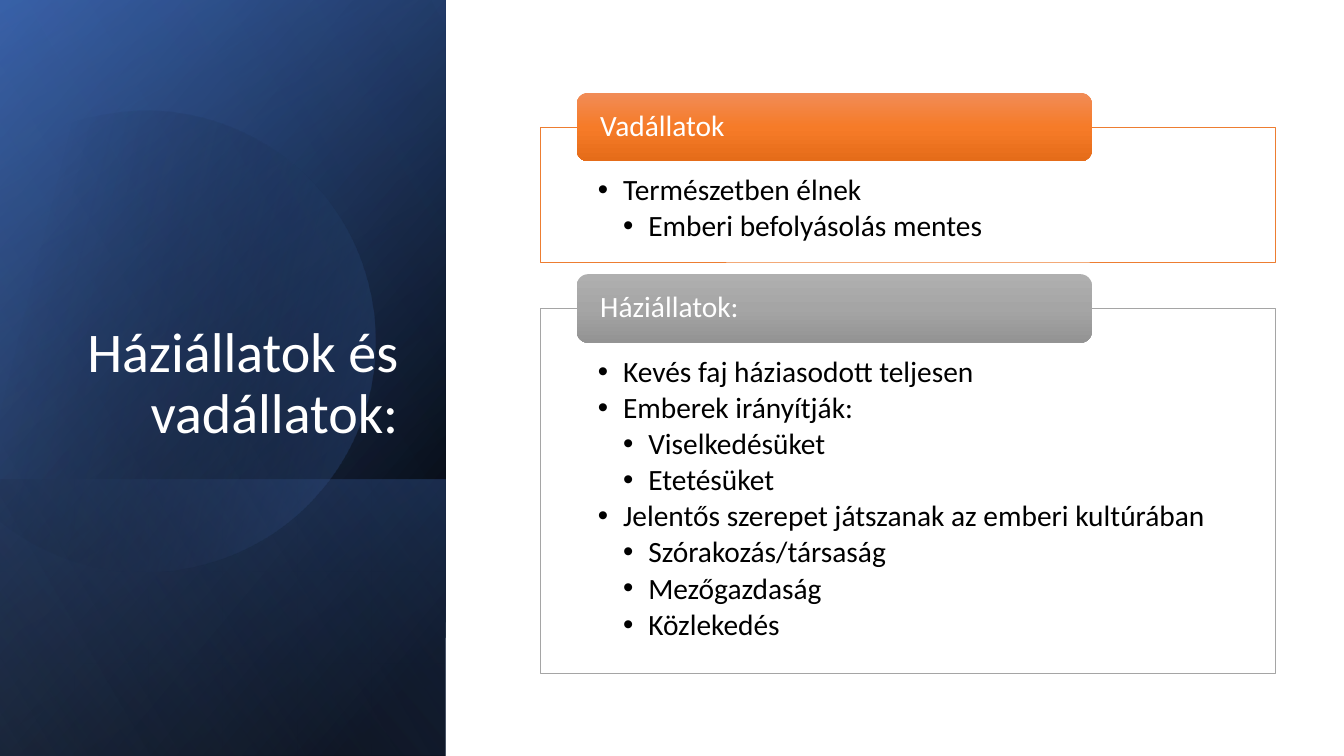
import math
from lxml import etree
from pptx import Presentation
from pptx import util as u
from pptx.dml.color import RGBColor
from pptx.enum import shapes, text
from pptx.oxml.ns import qn

DISC_START = (1.49, 1.1)
DISC_SEGMENTS = [
    [(2.46, 1.12), (3.35, 1.77), (3.63, 2.75)],
    [(3.98, 3.97), (3.28, 5.23), (2.07, 5.58)],
    [(1.31, 5.8), (0.53, 5.61), (-0.03, 5.14)],
    [(-0.15, 5.03)],
    [(-0.15, 1.75)],
    [(0, 1.61)],
    [(0.23, 1.42), (0.5, 1.28), (0.8, 1.19)],
    [(1.03, 1.13), (1.26, 1.1), (1.49, 1.1)],
]


def color(value):
    return RGBColor.from_string(value)


def write(tf, items, font="Calibri", size=21, fill="000000", align=text.PP_ALIGN.LEFT,
          anchor=text.MSO_ANCHOR.TOP, insets=(0.1, 0.05, 0.1, 0.05), after=0):
    tf.word_wrap = True
    tf.auto_size = text.MSO_AUTO_SIZE.NONE
    tf.vertical_anchor = anchor
    tf.margin_left, tf.margin_top, tf.margin_right, tf.margin_bottom = map(u.Inches, insets)
    for i, (level, words) in enumerate(items):
        p = tf.add_paragraph() if i else tf.paragraphs[0]
        p.alignment = align
        p.line_spacing = 0.9
        p.space_before = u.Pt(0)
        p.space_after = u.Pt(after)
        r = p.add_run()
        r.text = words
        r.font.name = font
        r.font.size = u.Pt(size)
        r.font.color.rgb = color(fill)
        if level:
            p.level = level
            pPr = p._p.get_or_add_pPr()
            pPr.set("marL", str(u.Inches(0.25 * level)))
            pPr.set("indent", str(u.Inches(-0.25)))
            bullet_font = etree.SubElement(pPr, qn("a:buFont"))
            bullet_font.set("typeface", "Arial")
            etree.SubElement(pPr, qn("a:buChar")).set("char", "•")


class Deck:
    font = "Calibri"
    white = "FFFFFF"
    panel_width = 4.42
    box_left, box_width = 5.36, 7.29
    header_left, header_width, header_height = 5.72, 5.11, 0.68

    def __init__(self, prs):
        self.s = prs.slides.add_slide(prs.slide_layouts[5])

    def shape(self, kind, left, top, width, height):
        sp = self.s.shapes.add_shape(kind, *map(u.Inches, (left, top, width, height)))
        sp.shadow.inherit = False
        sp.line.fill.background()
        return sp

    def gradient(self, sp, stops, angle):
        sp.fill.gradient()
        grad = sp.element.spPr.find(qn("a:gradFill"))
        stop_list = grad.find(qn("a:gsLst"))
        for old in list(stop_list):
            stop_list.remove(old)
        for position, value, alpha in stops:
            gs = etree.SubElement(stop_list, qn("a:gs"))
            gs.set("pos", str(position * 1000))
            rgb = etree.SubElement(gs, qn("a:srgbClr"))
            rgb.set("val", value)
            if alpha < 100:
                etree.SubElement(rgb, qn("a:alpha")).set("val", str(alpha * 1000))
        grad.find(qn("a:lin")).set("ang", str(angle * 60000))

    def panel(self, top, stops, angle):
        length, width = 7.5 - top, self.panel_width
        sp = self.shape(shapes.MSO_SHAPE.RECTANGLE, (width - length) / 2,
                        top + (length - width) / 2, length, width)
        sp.rotation = 90
        sp.element.spPr.find(qn("a:xfrm")).set("flipH", "1")
        self.gradient(sp, stops, angle)

    def cut_disc(self, left, top, width, height, rotation, stops, angle):
        cx, cy = left + width / 2, top + height / 2
        cos, sin = math.cos(math.radians(-rotation)), math.sin(math.radians(-rotation))

        def unturned(point):
            dx, dy = point[0] - cx, point[1] - cy
            return u.Inches(cx + dx * cos - dy * sin), u.Inches(cy + dx * sin + dy * cos)

        points = [unturned(q) for q in [DISC_START] + sum(DISC_SEGMENTS, [])]
        builder = self.s.shapes.build_freeform(*points[0])
        builder.add_line_segments(points[1:], close=True)
        sp = builder.convert_to_shape()
        shift_x, shift_y = sp.left - u.Inches(left), sp.top - u.Inches(top)
        sp.width, sp.height = u.Inches(width), u.Inches(height)
        sp.left, sp.top, sp.rotation = u.Inches(left), u.Inches(top), rotation

        outline = next(sp.element.iter(qn("a:path")))
        outline.set("w", str(sp.width))
        outline.set("h", str(sp.height))
        for pt in outline.iter(qn("a:pt")):
            pt.set("x", str(int(pt.get("x")) + shift_x))
            pt.set("y", str(int(pt.get("y")) + shift_y))
        lines = iter(outline.findall(qn("a:lnTo")))
        for segment in DISC_SEGMENTS:
            group = [next(lines) for _ in segment]
            if len(group) == 3:
                curve = etree.Element(qn("a:cubicBezTo"))
                group[0].addprevious(curve)
                for line in group:
                    curve.append(line[0])
                    outline.remove(line)

        sp.shadow.inherit = False
        sp.line.fill.background()
        self.gradient(sp, stops, angle)

    def title(self, words, left, top, width, height):
        sp = self.s.shapes.title
        sp.left, sp.top, sp.width, sp.height = map(u.Inches, (left, top, width, height))
        write(sp.text_frame, [(0, words)], font=self.font, size=40, fill=self.white,
              align=text.PP_ALIGN.RIGHT, anchor=text.MSO_ANCHOR.BOTTOM)
        self.s.shapes.element.append(sp.element)

    def section(self, header, top, height, tones, items):
        box = self.shape(shapes.MSO_SHAPE.RECTANGLE, self.box_left, top, self.box_width, height)
        box.fill.solid()
        box.fill.fore_color.rgb = color(self.white)
        box.line.color.rgb = color(tones["line"])
        box.line.width = u.Pt(0.5)
        write(box.text_frame, items, font=self.font, insets=(0.57, 0.48, 0.57, 0.16), after=3.15)
        tab = self.shape(shapes.MSO_SHAPE.ROUNDED_RECTANGLE, self.header_left,
                         top - self.header_height / 2, self.header_width, self.header_height)
        self.gradient(tab, [(i * 50, c, 100) for i, c in enumerate(tones["header"])], 90)
        write(tab.text_frame, [(0, header)], font=self.font, fill=self.white,
              anchor=text.MSO_ANCHOR.MIDDLE, insets=(0.2, 0, 0.2, 0))


def main():
    prs = Presentation()
    prs.slide_width, prs.slide_height = u.Inches(13.33), u.Inches(7.5)
    deck = Deck(prs)

    deck.panel(0, [(8, "000000", 100), (100, "2F5597", 100)], 50)
    deck.panel(0, [(0, "000000", 0), (99, "4472C4", 46)], 30)
    deck.panel(4.76, [(2, "4472C4", 29), (100, "000000", 30)], 130)
    deck.cut_disc(-0.55, 1.06, 4.27, 4.57, 343.9,
                  [(29, "000000", 0), (100, "4472C4", 43)], 30)
    deck.panel(0, [(0, "000000", 0), (99, "8FAADC", 11)], 120)
    deck.title("Háziállatok és vadállatok:", 0.64, 1.85, 3.41, 2.62)

    deck.section("Vadállatok", 1.26, 1.34,
                 {"line": "ED7D31", "header": ("F18C57", "F67B28", "E56C19")},
                 [(1, "Természetben élnek"),
                  (2, "Emberi befolyásolás mentes")])
    deck.section("Háziállatok:", 3.06, 3.62,
                 {"line": "A5A5A5", "header": ("AFAFAF", "A5A5A5", "939393")},
                 [(1, "Kevés faj háziasodott teljesen"),
                  (1, "Emberek irányítják:"),
                  (2, "Viselkedésüket"),
                  (2, "Etetésüket"),
                  (1, "Jelentős szerepet játszanak az emberi kultúrában"),
                  (2, "Szórakozás/társaság"),
                  (2, "Mezőgazdaság"),
                  (2, "Közlekedés")])
    prs.save("out.pptx")


if __name__ == "__main__":
    main()
